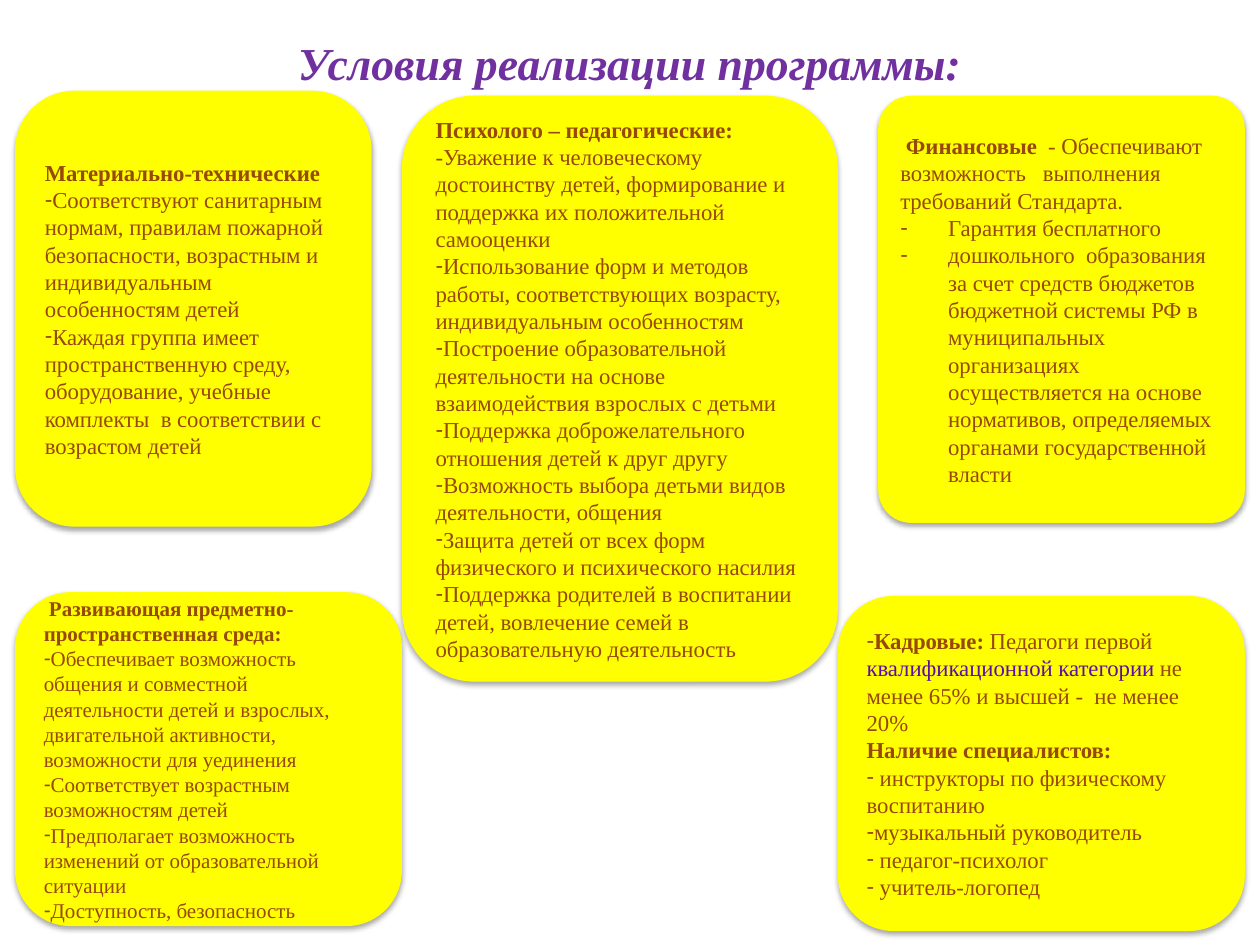
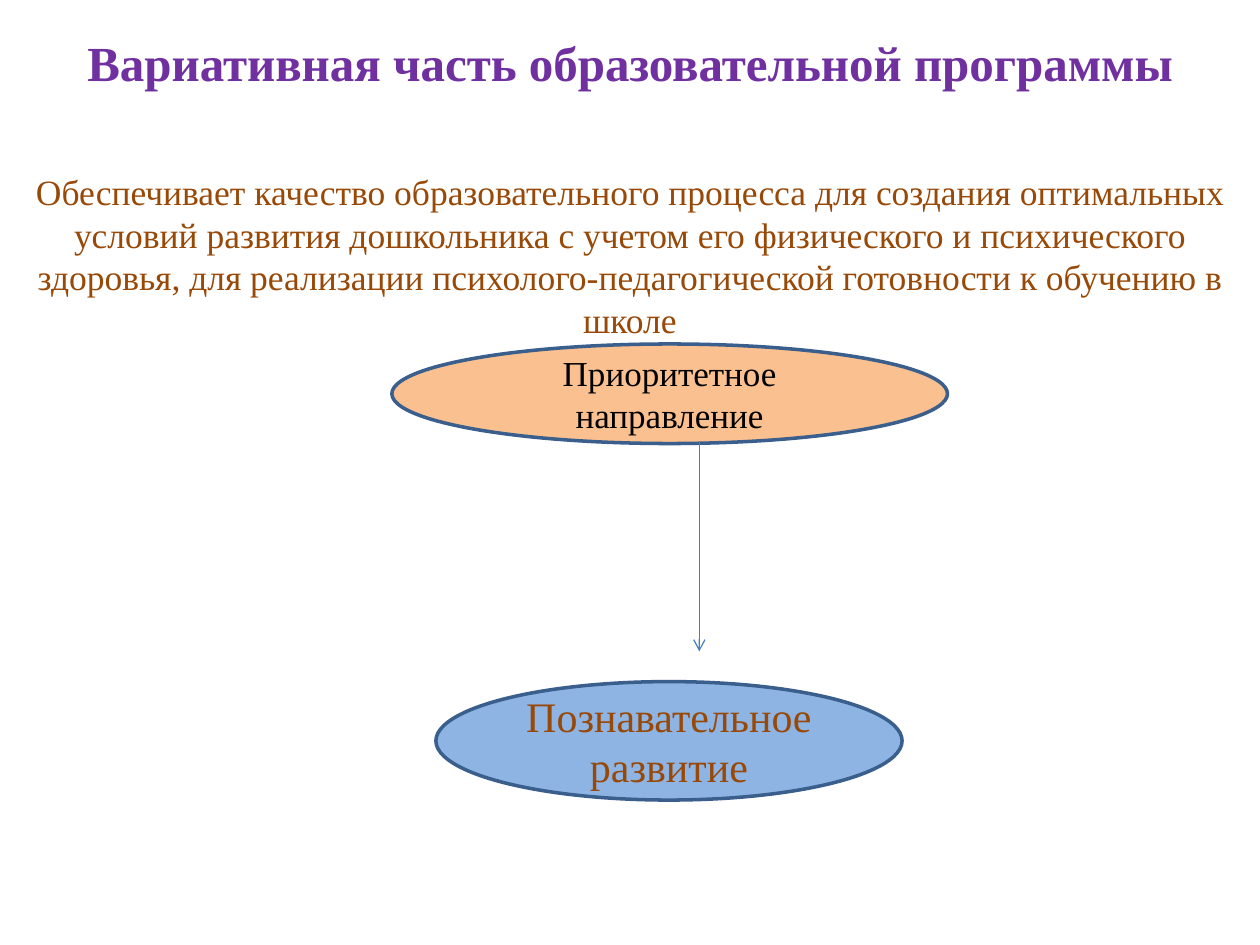
from lxml import etree
from pptx import Presentation, util as u
from pptx.dml.color import RGBColor
from pptx.enum import shapes, text
from pptx.oxml import parse_xml
from pptx.oxml.ns import nsdecls, qn

COLORS = {
    "title": "7030A0", "body": "984807", "accent": "5D0DA5", "black": "000000",
    "card": "FFFF00", "priority": "FAC090", "area": "8EB4E3",
    "outline": "3A5F8C", "arrow": "4B7EBC",
}
FONT = "Times New Roman"
COLUMNS, ROWS = 100, 75
CELL = u.Inches(0.1)
LEFT, CENTER = text.PP_ALIGN.LEFT, text.PP_ALIGN.CENTER
TOP, MIDDLE = text.MSO_ANCHOR.TOP, text.MSO_ANCHOR.MIDDLE


def grid(*cells):
    return [u.Emu(round(cell * CELL)) for cell in cells]


def rgb(name):
    return RGBColor.from_string(COLORS[name])


# Paragraph kinds: (runs, bulleted, hanging indent); a run is (words, bold, colour)
def plain(words, bold=False):
    return [(words, bold, "body")], False, 0


def heading(words):
    return plain(words, bold=True)


def bullet(words, hang=0):
    return [(words, False, "body")], True, hang


def add_bullet(paragraph, hang):
    properties = paragraph._p.get_or_add_pPr()
    properties.set("marL", str(u.Inches(hang)))
    properties.set("indent", str(-u.Inches(hang)))
    etree.SubElement(properties, qn("a:buFont")).set("typeface", "Arial")
    etree.SubElement(properties, qn("a:buChar")).set("char", "-")


def write(shape, paragraphs, size, align=LEFT, anchor=MIDDLE, before=0, italic=False):
    frame = shape.text_frame
    frame.word_wrap = True
    frame.vertical_anchor = anchor
    for index, (runs, bulleted, hang) in enumerate(paragraphs):
        paragraph = frame.add_paragraph() if index else frame.paragraphs[0]
        paragraph.alignment = align
        paragraph.space_before = u.Pt(before)
        if bulleted:
            add_bullet(paragraph, hang)
        for words, bold, color in runs:
            run = paragraph.add_run()
            run.text = words
            run.font.name, run.font.size = FONT, u.Pt(size)
            run.font.bold, run.font.italic = bold, italic
            run.font.color.rgb = rgb(color)


def add_text(slide, cells, words, size, color="body", bold=False, **style):
    box = slide.shapes.add_textbox(*grid(*cells))
    write(box, [([(words, bold, color)], False, 0)], size, align=CENTER, **style)


def add_title(slide, cells, words, size, italic=False):
    add_text(slide, cells, words, size, "title", bold=True, italic=italic)


def add_card(slide, cells, paragraphs, size=13, corner=None):
    card = slide.shapes.add_shape(shapes.MSO_SHAPE.ROUNDED_RECTANGLE, *grid(*cells))
    if corner is not None:
        card.adjustments[0] = corner
    card.fill.solid()
    card.fill.fore_color.rgb = rgb("card")
    card.line.fill.background()
    # Soft shadow straight below the card
    card._element.spPr.append(parse_xml(
        f'<a:effectLst {nsdecls("a")}>'
        f'<a:outerShdw blurRad="{u.Pt(3.1)}" dist="{u.Pt(1.8)}" dir="5400000" rotWithShape="0">'
        f'<a:srgbClr val="{COLORS["black"]}"><a:alpha val="35000"/></a:srgbClr>'
        '</a:outerShdw></a:effectLst>'))
    write(card, paragraphs, size)


def add_oval(slide, cells, words, size, fill, color, before=0):
    oval = slide.shapes.add_shape(shapes.MSO_SHAPE.OVAL, *grid(*cells))
    oval.shadow.inherit = False
    oval.fill.solid()
    oval.fill.fore_color.rgb = rgb(fill)
    oval.line.color.rgb = rgb("outline")
    oval.line.width = u.Pt(2)
    write(oval, [([(words, False, color)], False, 0)], size, align=CENTER, before=before)


def add_arrow(slide, *ends):
    arrow = slide.shapes.add_connector(shapes.MSO_CONNECTOR.STRAIGHT, *grid(*ends))
    arrow.line.color.rgb = rgb("arrow")
    arrow.line.width = u.Pt(0.75)
    etree.SubElement(arrow.line._get_or_add_ln(), qn("a:tailEnd")).set("type", "arrow")
    etree.SubElement(arrow._element.spPr, qn("a:effectLst"))


def build_conditions(slide):
    add_title(slide, (5, 3, 90, 3.8), "Условия реализации программы:", 26.1, italic=True)

    facilities = [
        heading("Материально-технические"),
        bullet("Соответствуют санитарным нормам, правилам пожарной безопасности, "
               "возрастным и индивидуальным особенностям детей"),
        bullet("Каждая группа имеет пространственную среду, оборудование, учебные "
               "комплекты  в соответствии с возрастом детей"),
    ]
    psychology = [
        heading("Психолого – педагогические:"),
        plain("-Уважение к человеческому достоинству детей, формирование и поддержка "
              "их положительной самооценки"),
        bullet("Использование форм и методов работы, соответствующих возрасту, "
               "индивидуальным особенностям"),
        bullet("Построение образовательной деятельности на основе взаимодействия "
               "взрослых с детьми"),
        bullet("Поддержка доброжелательного отношения детей к друг другу"),
        bullet("Возможность выбора детьми видов деятельности, общения"),
        bullet("Защита детей от всех форм физического и психического насилия"),
        bullet("Поддержка родителей в воспитании детей, вовлечение семей в "
               "образовательную деятельность"),
    ]
    environment = [
        heading(" Развивающая предметно-пространственная среда:"),
        bullet("Обеспечивает возможность общения и совместной деятельности детей и "
               "взрослых, двигательной активности, возможности для уединения"),
        bullet("Соответствует возрастным возможностям детей"),
        bullet("Предполагает возможность изменений от образовательной ситуации"),
        bullet("Доступность, безопасность"),
    ]
    staff = [
        ([("Кадровые: ", True, "body"), ("Педагоги первой", False, "body"),
          (" квалификационной категории", False, "accent"),
          (" не менее 65% и высшей -  не менее 20%", False, "body")], True, 0),
        heading("Наличие специалистов:"),
        bullet(" инструкторы по физическому воспитанию"),
        bullet("музыкальный руководитель"),
        bullet(" педагог-психолог"),
        bullet(" учитель-логопед"),
    ]
    finance = [
        ([(" Финансовые", True, "body"),
          ("  - Обеспечивают возможность   выполнения требований Стандарта.",
           False, "body")], False, 0),
        bullet("Гарантия бесплатного", hang=0.38),
        bullet("дошкольного  образования за счет средств бюджетов бюджетной системы РФ "
               "в муниципальных организациях осуществляется на основе нормативов, "
               "определяемых органами государственной  власти", hang=0.38),
    ]

    # Outer cards share the side margin; the middle card fills the gap below the title
    margin, middle, middle_width = 1.2, 31.9, 34.6
    right_edge = COLUMNS - margin
    staff_left = middle + middle_width
    add_card(slide, (margin, 7.2, 28.3, 34.6), facilities)
    add_card(slide, (middle, 7.6, middle_width, 46.5), psychology)
    add_card(slide, (margin, 47, middle - margin, 26.5), environment, size=12)
    add_card(slide, (staff_left, 47.3, right_edge - staff_left, 26.6), staff)
    add_card(slide, (69.7, 7.6, right_edge - 69.7, 33.9), finance, corner=0.09)


def build_variable_part(slide):
    add_title(slide, (5, 0, 90, 9.9), "Вариативная часть образовательной программы", 28)
    add_text(slide, (0, 13, COLUMNS, 13.6),
             "Обеспечивает качество образовательного процесса для создания оптимальных "
             "условий развития дошкольника с учетом его физического и психического "
             "здоровья, для реализации психолого-педагогической готовности к обучению "
             "в школе", 20.3, anchor=TOP)
    # Priority direction leads to the area of development
    add_oval(slide, (31.1, 27.3, 44.1, 7.9), "Приоритетное направление", 20,
             "priority", "black", before=4)
    add_oval(slide, (34.6, 54.1, 37, 9.4), "Познавательное развитие", 24, "area", "body")
    add_arrow(slide, 55.5, 35.1, 55.5, 51.7)


def main():
    deck = Presentation()
    deck.slide_width, deck.slide_height = grid(COLUMNS, ROWS)
    blank = deck.slide_layouts[6]
    for build in (build_conditions, build_variable_part):
        build(deck.slides.add_slide(blank))
    deck.save("out.pptx")


if __name__ == "__main__":
    main()
